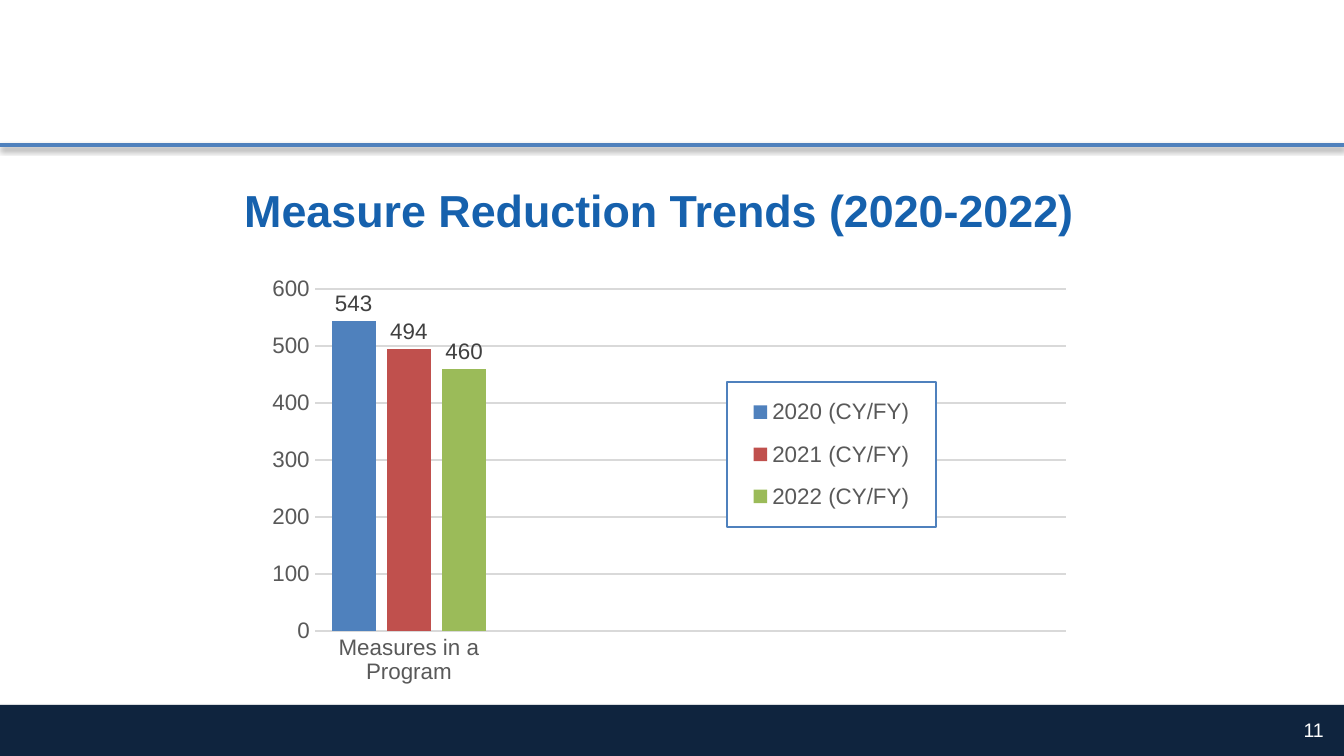
import pptx
import pptx.chart.data
import pptx.dml.color
import pptx.enum.chart
import pptx.enum.shapes
import pptx.enum.text
import pptx.oxml
import pptx.oxml.ns
import pptx.util
from dataclasses import dataclass

SCALE = 914400 / 134.4  # EMU in one px


@dataclass(frozen=True)
class Theme:
    font: str = "Arial"
    navy: str = "0F243E"
    blue: str = "4F81BD"
    title: str = "1661AD"
    white: str = "FFFFFF"
    gray: str = "595959"
    dark: str = "404040"
    grid: str = "D9D9D9"
    big: float = 24
    body: float = 12
    small: float = 10.5


@dataclass(frozen=True)
class Box:
    x: int
    y: int
    w: int
    h: int

    def emu(self) -> tuple:
        return tuple(px(n) for n in (self.x, self.y, self.w, self.h))


@dataclass(frozen=True)
class Series:
    name: str
    value: int
    color: str


THEME = Theme()
SERIES = (
    Series("2020 (CY/FY)", 543, "4F81BD"),
    Series("2021 (CY/FY)", 494, "C0504D"),
    Series("2022 (CY/FY)", 460, "9BBB59"),
)
CATS = ("Measures in a Program", "", "", "")
CHART = Box(242, 211, 841, 544)
PLOT = Box(315, 289, 751, 342)
LEGEND = Box(727, 382, 209, 145)


def px(n: int) -> int:
    return round(n * SCALE)


def rgb(color: str) -> pptx.dml.color.RGBColor:
    return pptx.dml.color.RGBColor.from_string(color)


def style(font, size: float, color: str, bold: bool = False) -> None:
    font.name = THEME.font
    font.size = pptx.util.Pt(size)
    font.color.rgb = rgb(color)
    font.bold = bold


def stroke(line, color: str, width: float) -> None:
    line.color.rgb = rgb(color)
    line.width = pptx.util.Pt(width)


def xml(text: str):
    """Build an element, its first tag declaring the chart and drawing names."""
    head, sep, rest = text.partition(">")
    slash = "/" if head.endswith("/") else ""
    names = pptx.oxml.ns.nsdecls("a", "c")
    return pptx.oxml.parse_xml(f"{head.rstrip('/')} {names}{slash}{sep}{rest}")


def shade(shape, dist: float, alpha: int) -> None:
    blur, gap = pptx.util.Pt(3.1), pptx.util.Pt(dist)
    shape._element.spPr.append(xml(
        f'<a:effectLst><a:outerShdw blurRad="{blur}" dist="{gap}" dir="5400000" '
        f'rotWithShape="0"><a:srgbClr val="000000"><a:alpha val="{alpha}000"/>'
        "</a:srgbClr></a:outerShdw></a:effectLst>"))


def layout(box: Box, target: str = ""):
    """Place a part of the chart by fractions of the chart's frame."""
    parts = {"x": (box.x - CHART.x) / CHART.w, "y": (box.y - CHART.y) / CHART.h,
             "w": box.w / CHART.w, "h": box.h / CHART.h}
    inner = f'<c:layoutTarget val="{target}"/>' if target else ""
    inner += '<c:xMode val="edge"/><c:yMode val="edge"/>'
    inner += "".join(f'<c:{k} val="{v:.4f}"/>' for k, v in parts.items())
    return xml(f"<c:layout><c:manualLayout>{inner}</c:manualLayout></c:layout>")


def drop(node) -> None:
    for old in node.findall(pptx.oxml.ns.qn("c:layout")):
        node.remove(old)


def write(slide, box: Box, text: str, size: float, color: str, align, bold: bool = False) -> None:
    frame = slide.shapes.add_textbox(*box.emu()).text_frame
    frame.word_wrap = True
    frame.vertical_anchor = pptx.enum.text.MSO_ANCHOR.MIDDLE
    para = frame.paragraphs[0]
    para.text = text
    para.alignment = align
    style(para.font, size, color, bold)


def frame(slide) -> None:
    # Footer band
    band = slide.shapes.add_shape(
        pptx.enum.shapes.MSO_SHAPE.RECTANGLE, *Box(-15, 705, 1374, 69).emu())
    band.fill.solid()
    band.fill.fore_color.rgb = rgb(THEME.navy)
    band.line.fill.background()
    shade(band, 1.8, 35)
    # Header rule
    rule = slide.shapes.add_connector(
        pptx.enum.shapes.MSO_CONNECTOR.STRAIGHT, 0, px(145), px(1344), px(145))
    stroke(rule.line, THEME.blue, 2)
    shade(rule, 1.6, 38)


def axes(chart) -> None:
    cat, val = chart.category_axis, chart.value_axis
    for axis in (cat, val):
        axis.major_tick_mark = pptx.enum.chart.XL_TICK_MARK.NONE
        axis.minor_tick_mark = pptx.enum.chart.XL_TICK_MARK.NONE
        style(axis.tick_labels.font, THEME.body, THEME.gray)
    stroke(cat.format.line, THEME.grid, 0.75)
    val.format.line.fill.background()
    val.minimum_scale, val.maximum_scale, val.major_unit = 0, 600, 100
    stroke(val.major_gridlines.format.line, THEME.grid, 0.75)


def key(chart) -> None:
    chart.has_legend = True
    legend = chart.legend
    legend.position = pptx.enum.chart.XL_LEGEND_POSITION.BOTTOM
    legend.include_in_layout = False
    style(legend.font, THEME.body, THEME.gray)
    node = legend._element
    drop(node)
    node.find(pptx.oxml.ns.qn("c:legendPos")).addnext(layout(LEGEND))
    fill, edge = (f'<a:solidFill><a:srgbClr val="{c}"/></a:solidFill>'
                  for c in (THEME.white, THEME.blue))
    node.find(pptx.oxml.ns.qn("c:txPr")).addprevious(
        xml(f'<c:spPr>{fill}<a:ln w="9525">{edge}</a:ln></c:spPr>'))


def graph(slide) -> None:
    data = pptx.chart.data.CategoryChartData()
    data.categories = CATS
    for item in SERIES:
        data.add_series(item.name, (item.value, None, None, None))
    chart = slide.shapes.add_chart(
        pptx.enum.chart.XL_CHART_TYPE.COLUMN_CLUSTERED, *CHART.emu(), data).chart
    chart.has_title = False
    style(chart.font, THEME.body, THEME.gray)
    axes(chart)
    key(chart)
    # Columns and their values
    plot = chart.plots[0]
    plot.vary_by_categories = False
    plot.gap_width, plot.overlap = 75, -25
    for item, bar in zip(SERIES, plot.series):
        bar.format.fill.solid()
        bar.format.fill.fore_color.rgb = rgb(item.color)
        labels = bar.data_labels
        labels.show_value = True
        labels.position = pptx.enum.chart.XL_LABEL_POSITION.OUTSIDE_END
        style(labels.font, THEME.body, THEME.dark)
    # Plot place and clear background
    area = chart._chartSpace.chart.plotArea
    drop(area)
    area.insert(0, layout(PLOT, "inner"))
    chart._chartSpace.chart.addnext(
        xml("<c:spPr><a:noFill/><a:ln><a:noFill/></a:ln></c:spPr>"))


def main() -> None:
    deck = pptx.Presentation()
    deck.slide_width, deck.slide_height = px(1344), px(756)
    slide = deck.slides.add_slide(deck.slide_layouts[6])
    frame(slide)
    graph(slide)
    align = pptx.enum.text.PP_ALIGN
    write(slide, Box(1102, 710, 235, 40), "11", THEME.small, THEME.white, align.RIGHT)
    write(slide, Box(231, 171, 864, 77), "Measure Reduction Trends (2020-2022)",
          THEME.big, THEME.title, align.LEFT, True)
    deck.save("out.pptx")


if __name__ == "__main__":
    main()
